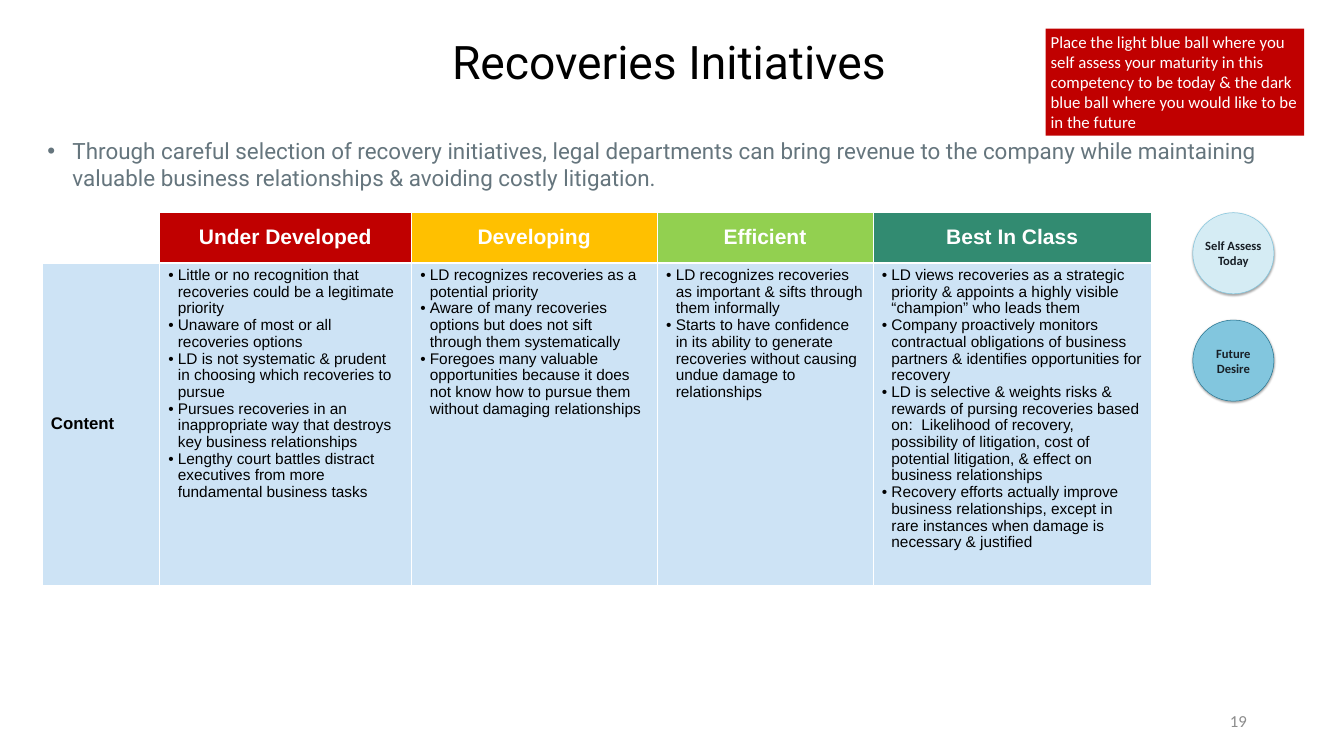
from pptx import Presentation
from pptx.dml.color import RGBColor
from pptx.enum.shapes import MSO_SHAPE
from pptx.enum.text import MSO_ANCHOR, PP_ALIGN
from pptx.util import Inches, Pt
from lxml.etree import SubElement
from pptx.oxml import parse_xml
from pptx.oxml.ns import nsdecls, qn

INK = {
    "black": "000000", "white": "FFFFFF", "gray": "8C8C8C", "slate": "65757D",
    "red": "C00000", "amber": "FFC000", "lime": "92D050", "green": "328B71",
    "ice": "CDE3F5", "pale": "D5ECF4", "sky": "82C6DE", "teal": "277692",
    "night": "181F26",
}
TITLE = "Recoveries Initiatives"
PAGE = "19"
NOTE = ("Place the light blue ball where you self assess your maturity in this competency "
        "to be today & the dark blue ball where you would like to be in the future")
LEAD = ("Through careful selection of recovery initiatives, legal departments can bring "
        "revenue to the company while maintaining valuable business relationships "
        "& avoiding costly litigation.")
BALLS = [("Self Assess Today", "pale", "sky"), ("Future Desire", "sky", "teal")]
LABEL = "Content"
LEVELS = [
    ("Under Developed", "red", 5, [
        "Little or no recognition that recoveries could be a legitimate priority",
        "Unaware of most or all recoveries options",
        "LD is not systematic & prudent in choosing which recoveries to pursue",
        "Pursues recoveries in an inappropriate way that destroys key business relationships",
        "Lengthy court battles distract executives from more fundamental business tasks",
    ]),
    ("Developing", "amber", 4.88, [
        "LD recognizes recoveries as a potential priority",
        "Aware of many recoveries options but does not sift through them systematically",
        "Foregoes many valuable opportunities because it does not know how to pursue them "
        "without damaging relationships",
    ]),
    ("Efficient", "lime", 4.28, [
        "LD recognizes recoveries as important & sifts through them informally",
        "Starts to have confidence in its ability to generate recoveries without causing "
        "undue damage to relationships",
    ]),
    ("Best In Class", "green", 5.53, [
        "LD views recoveries as a strategic priority & appoints a highly visible "
        "“champion” who leads them",
        "Company proactively monitors contractual obligations of business partners "
        "& identifies opportunities for recovery",
        "LD is selective & weights risks & rewards of pursing recoveries based on:  "
        "Likelihood of recovery, possibility of litigation, cost of potential litigation, "
        "& effect on business relationships",
        "Recovery efforts actually improve business relationships, except in rare instances "
        "when damage is necessary & justified",
    ]),
]


def paint(fill, name):
    fill.solid()
    fill.fore_color.rgb = RGBColor.from_string(INK[name])


def write(frame, lines, size, face, ink, bold=False, align=PP_ALIGN.LEFT, dent=0):
    frame.word_wrap = True
    frame.text = "\n".join(lines)
    for para in frame.paragraphs:
        para.alignment = align
        if dent:
            props = para._p.get_or_add_pPr()
            props.set("marL", str(Inches(dent)))
            props.set("indent", str(-Inches(dent)))
            SubElement(props, qn("a:buFont")).set("typeface", "Arial")
            SubElement(props, qn("a:buChar")).set("char", "•")
        for run in para.runs:
            font = run.font
            font.size, font.name, font.bold = Pt(size), face, bold
            font.color.rgb = RGBColor.from_string(INK[ink])


def add_text(box, anchor, *args, **opts):
    frame = slide.shapes.add_textbox(*map(Inches, box)).text_frame
    frame.vertical_anchor = anchor
    write(frame, *args, **opts)


def add_form(kind, box, fill):
    form = slide.shapes.add_shape(kind, *map(Inches, box))
    form.shadow.inherit = False
    paint(form.fill, fill)
    return form


def add_shade(form):
    shade = form._element.spPr.find(qn("a:effectLst"))
    shade.append(parse_xml(
        f'<a:outerShdw {nsdecls("a")} blurRad="{Pt(3.1)}" dist="{Pt(1.8)}" dir="5400000" '
        'rotWithShape="0"><a:srgbClr val="000000"><a:alpha val="35000"/></a:srgbClr>'
        '</a:outerShdw>'))


def add_edges(cell, top, bottom):
    props = cell._tc.get_or_add_tcPr()
    edges = {"L": 1, "R": 1, "T": top, "B": bottom}
    for spot, (side, width) in enumerate(edges.items()):
        props.insert(spot, parse_xml(
            f'<a:ln{side} {nsdecls("a")} w="{Pt(width)}"><a:solidFill>'
            f'<a:srgbClr val="{INK["white"]}"/></a:solidFill></a:ln{side}>'))


deck = Presentation()
deck.slide_width, deck.slide_height = Inches(26.67), Inches(15)
slide = deck.slides.add_slide(deck.slide_layouts[6])

add_text((18.84, 13.9, 6, 0.8), MSO_ANCHOR.MIDDLE, [PAGE], 24, "Calibri", "gray",
         align=PP_ALIGN.RIGHT)
add_text((0.67, 0.74, 25.21, 0.93), MSO_ANCHOR.MIDDLE, [TITLE], 66, "Roboto", "black",
         align=PP_ALIGN.CENTER)

note = add_form(MSO_SHAPE.RECTANGLE, (20.75, 0.57, 5.13, 2.12), "red")
note.line.fill.background()
note.text_frame.vertical_anchor = MSO_ANCHOR.TOP
write(note.text_frame, [NOTE], 24, "Calibri", "white")

add_text((0.84, 2.67, 25.04, 1.18), MSO_ANCHOR.TOP, [LEAD], 32, "Roboto", "slate", dent=0.5)

for row, (name, fill, edge) in enumerate(BALLS):
    ball = add_form(MSO_SHAPE.OVAL, (23.67, 4.22 + row * 2.13, 1.61, 1.61), fill)
    paint(ball.line.fill, edge)
    ball.line.width = Pt(0.75)
    add_shade(ball)
    frame = ball.text_frame
    frame.margin_left = frame.margin_right = frame.margin_top = frame.margin_bottom = 0
    frame.vertical_anchor = MSO_ANCHOR.MIDDLE
    write(frame, [name], 18, "Calibri", "night", bold=True, align=PP_ALIGN.CENTER)

widths = [2.33] + [level[2] for level in LEVELS]
heights = [0.99, 6.41]
grid = slide.shapes.add_table(
    2, len(widths), Inches(0.83), Inches(4.22), Inches(sum(widths)), Inches(sum(heights))).table
for col, width in zip(grid.columns, widths):
    col.width = Inches(width)
for row, height in zip(grid.rows, heights):
    row.height = Inches(height)

for col in range(len(widths)):
    head, body = grid.cell(0, col), grid.cell(1, col)
    for cell in (head, body):
        cell.margin_left = cell.margin_right = Inches(0.18)
        cell.margin_top = cell.margin_bottom = Inches(0.09)
    head.vertical_anchor = MSO_ANCHOR.MIDDLE
    paint(body.fill, "ice")
    if col:
        name, fill, _, points = LEVELS[col - 1]
        paint(head.fill, fill)
        write(head.text_frame, [name], 30, "Arial", "white", bold=True, align=PP_ALIGN.CENTER)
        write(body.text_frame, points, 22, "Arial", "black", dent=0.19)
        for para in body.text_frame.paragraphs:
            para.line_spacing = 0.97
    else:
        head.fill.background()
        body.vertical_anchor = MSO_ANCHOR.MIDDLE
        write(body.text_frame, [LABEL], 24, "Arial", "black", bold=True)
    add_edges(head, 1, 3)
    add_edges(body, 3, 1)

deck.save("out.pptx")
